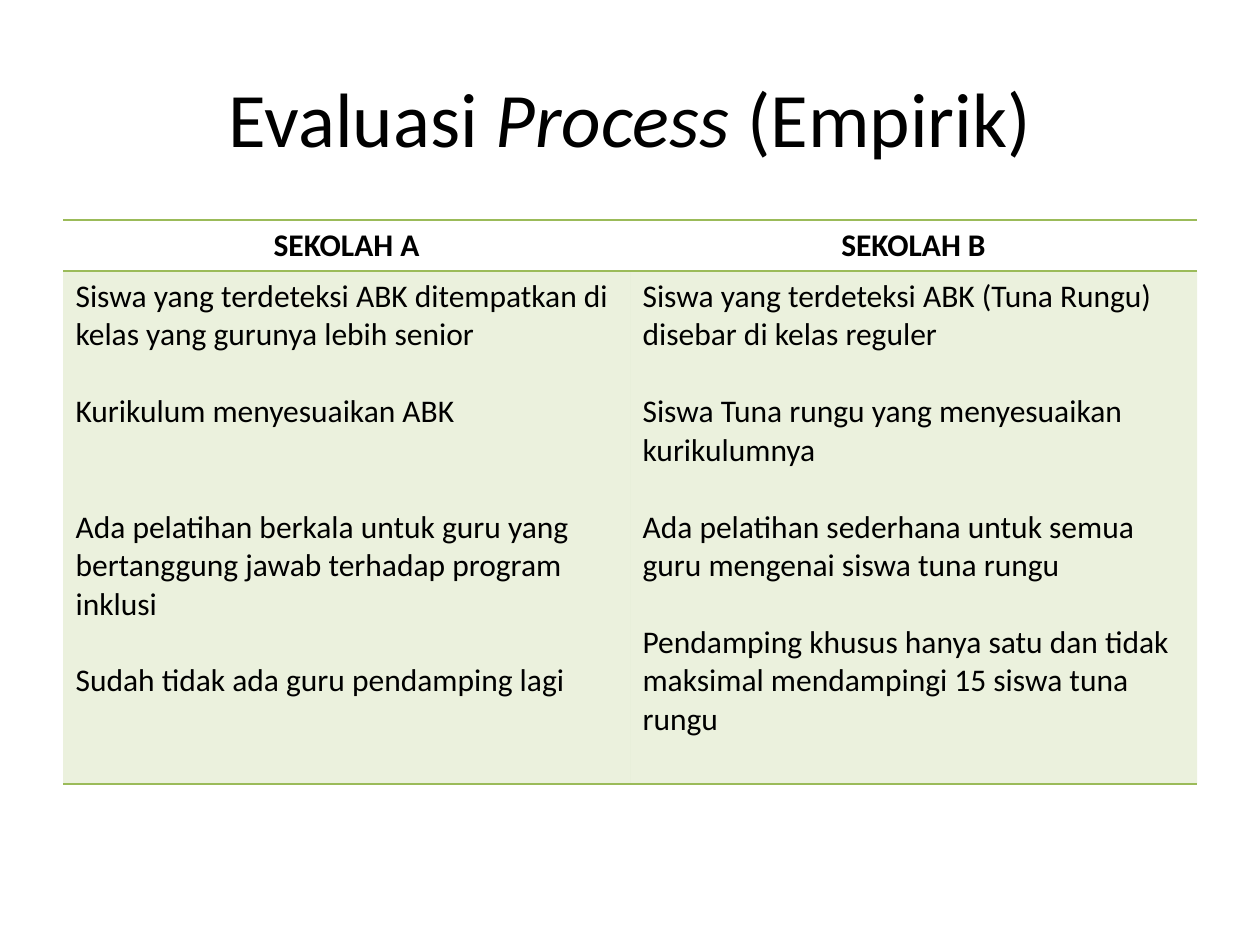
from lxml import etree
from pptx import Presentation
from pptx import util as u
from pptx.dml.color import RGBColor
from pptx.enum import text
from pptx.oxml.ns import qn

PX = 914400 / 126
FONT = "Calibri"
LINE = 22
COLORS = {"text": "000000", "green": "9BBB59"}
NO_STYLE = "{2D5ABB26-0587-4C30-8999-92F81FD0307C}"
TITLE = [("Evaluasi ", False), ("Process ", True), ("(Empirik)", False)]
HEADERS = ["SEKOLAH A", "SEKOLAH B"]
BODIES = [
    [("Siswa yang terdeteksi ABK ditempatkan di kelas yang gurunya lebih senior", 0),
     ("Kurikulum menyesuaikan ABK", 1),
     ("Ada pelatihan berkala untuk guru yang bertanggung jawab terhadap program inklusi", 2),
     ("Sudah tidak ada guru pendamping lagi", 1)],
    [("Siswa yang terdeteksi ABK (Tuna Rungu) disebar di kelas reguler", 0),
     ("Siswa Tuna rungu yang menyesuaikan kurikulumnya", 1),
     ("Ada pelatihan sederhana untuk semua guru mengenai siswa tuna rungu", 1),
     ("Pendamping khusus hanya satu dan tidak maksimal mendampingi 15 siswa tuna rungu", 1)],
]


def px(n):
    """Turn pixels into EMU."""
    return u.Emu(round(n * PX))


def style(r, size, bold=False, italic=False):
    """Set the font of a run."""
    r.font.name, r.font.size = FONT, u.Pt(size)
    r.font.bold, r.font.italic = bold, italic
    r.font.color.rgb = RGBColor.from_string(COLORS["text"])


def add_title(s, parts):
    """Add the centred title."""
    tf = s.shapes.add_textbox(px(63), px(38), px(1134), px(157)).text_frame
    tf.word_wrap = True
    tf.vertical_anchor = text.MSO_ANCHOR.MIDDLE
    p = tf.paragraphs[0]
    p.alignment = text.PP_ALIGN.CENTER
    for words, italic in parts:
        r = p.add_run()
        r.text = words
        style(r, 44, italic=italic)


def add_border(cell, side):
    """Draw a green line on one side of a cell."""
    ln = etree.SubElement(cell._tc.get_or_add_tcPr(), qn(f"a:{side}"), w=str(u.Pt(1)))
    fill = etree.SubElement(ln, qn("a:solidFill"))
    etree.SubElement(fill, qn("a:srgbClr"), val=COLORS["green"])


def tint(cell):
    """Fill a cell with see-through green."""
    cell.fill.solid()
    cell.fill.fore_color.rgb = RGBColor.from_string(COLORS["green"])
    clr = cell._tc.tcPr.find(qn("a:solidFill")).find(qn("a:srgbClr"))
    etree.SubElement(clr, qn("a:alpha"), val="20000")


def fill_header(cell, words):
    """Write a bold centred heading between two lines."""
    add_border(cell, "lnT")
    add_border(cell, "lnB")
    cell.fill.background()
    p = cell.text_frame.paragraphs[0]
    p.text = words
    p.alignment = text.PP_ALIGN.CENTER
    style(p.runs[0], 18, bold=True)


def fill_body(cell, items):
    """Write findings, each set off by a number of lines."""
    add_border(cell, "lnB")
    tint(cell)
    tf = cell.text_frame
    tf.text = "\n".join(words for words, _ in items)
    for p, (_, gap) in zip(tf.paragraphs, items):
        p.space_before = u.Pt(gap * LINE)
        style(p.runs[0], 18)


def add_comparison(s):
    """Add the table comparing the two schools."""
    table = s.shapes.add_table(2, 2, px(63), px(220), px(1134), px(564)).table
    table._tbl.tblPr.find(qn("a:tableStyleId")).text = NO_STYLE
    table.first_row = table.horz_banding = False
    for row, height in zip(table.rows, (51, 513)):
        row.height = px(height)
    for col, (header, body) in enumerate(zip(HEADERS, BODIES)):
        fill_header(table.cell(0, col), header)
        fill_body(table.cell(1, col), body)


def main():
    """Build and save the slide."""
    prs = Presentation()
    prs.slide_width, prs.slide_height = px(1260), px(945)
    s = prs.slides.add_slide(prs.slide_layouts[6])
    add_title(s, TITLE)
    add_comparison(s)
    prs.save("out.pptx")


if __name__ == "__main__":
    main()
